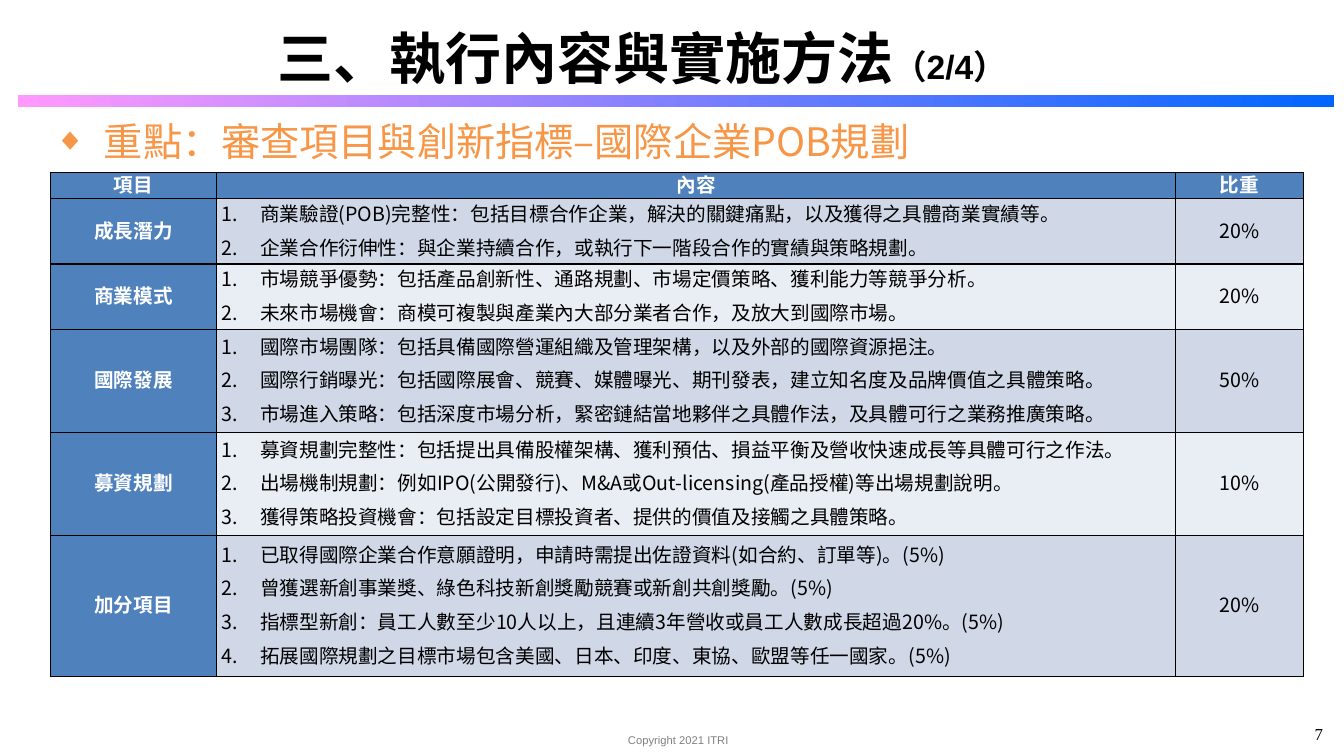
from dataclasses import dataclass
from typing import Any

from lxml import etree
from pptx import Presentation
from pptx import util as u
from pptx.dml.color import RGBColor
from pptx.enum import shapes, text
from pptx.oxml import ns

BLACK = RGBColor(0, 0, 0)
WHITE = RGBColor(255, 255, 255)
GRAY = RGBColor(0x80, 0x80, 0x80)
ORANGE = RGBColor(0xF7, 0x96, 0x46)
PINK = RGBColor(0xFF, 0x99, 0xFF)
BLUE = RGBColor(0x00, 0x66, 0xFF)
HEAD = RGBColor(0x4F, 0x81, 0xBD)
BANDS = (RGBColor(0xD0, 0xD8, 0xE8), RGBColor(0xE9, 0xED, 0xF4))

CJK = "Noto Sans CJK SC"
ALIGN = text.PP_ALIGN
MIDDLE = text.MSO_ANCHOR.MIDDLE
WIDTHS = (1.65, 9.51, 1.27)
HEAD_H = 0.26
TITLES = ("項目", "內容", "比重")


@dataclass(frozen=True)
class Topic:
    name: str
    high: float
    share: str
    points: tuple[str, ...]


@dataclass(frozen=True)
class Look:
    size: float
    color: RGBColor
    bold: bool = False
    face: str = CJK


TOPICS = (
    Topic("成長潛力", 0.65, "20%", (
        "商業驗證(POB)完整性：包括目標合作企業，解決的關鍵痛點，以及獲得之具體商業實績等。",
        "企業合作衍伸性：與企業持續合作，或執行下一階段合作的實績與策略規劃。",
    )),
    Topic("商業模式", 0.65, "20%", (
        "市場競爭優勢：包括產品創新性、通路規劃、市場定價策略、獲利能力等競爭分析。",
        "未來市場機會：商模可複製與產業內大部分業者合作，及放大到國際市場。",
    )),
    Topic("國際發展", 1.02, "50%", (
        "國際市場團隊：包括具備國際營運組織及管理架構，以及外部的國際資源挹注。",
        "國際行銷曝光：包括國際展會、競賽、媒體曝光、期刊發表，建立知名度及品牌價值之具體策略。",
        "市場進入策略：包括深度市場分析，緊密鏈結當地夥伴之具體作法，及具體可行之業務推廣策略。",
    )),
    Topic("募資規劃", 1.02, "10%", (
        "募資規劃完整性：包括提出具備股權架構、獲利預估、損益平衡及營收快速成長等具體可行之作法。",
        "出場機制規劃：例如IPO(公開發行)、M&A或Out-licensing(產品授權)等出場規劃說明。",
        "獲得策略投資機會：包括設定目標投資者、提供的價值及接觸之具體策略。",
    )),
    Topic("加分項目", 1.4, "20%", (
        "已取得國際企業合作意願證明，申請時需提出佐證資料(如合約、訂單等)。(5%)",
        "曾獲選新創事業獎、綠色科技新創獎勵競賽或新創共創獎勵。(5%)",
        "指標型新創：員工人數至少10人以上，且連續3年營收或員工人數成長超過20%。(5%)",
        "拓展國際規劃之目標市場包含美國、日本、印度、東協、歐盟等任一國家。(5%)",
    )),
)
LABEL = Look(14, WHITE, True)
BODY = Look(14, BLACK)


def apply(item: Any, form: dict[str, Any]) -> None:
    for key, value in form.items():
        setattr(item, key, value)


def child(node: Any, tag: str, **attrs: str) -> Any:
    return etree.SubElement(node, ns.qn(tag), attrs)


def write(para: Any, words: str, look: Look) -> None:
    run = para.add_run()
    run.text = words
    apply(run.font, {"size": u.Pt(look.size), "bold": look.bold, "name": look.face})
    run.font.color.rgb = look.color
    child(run.font._element, "a:ea", typeface=CJK)


def hang(para: Any, indent: float) -> Any:
    """Give a hanging indent and return the properties for the bullet."""
    props = para._p.get_or_add_pPr()
    width = u.Inches(indent)
    apply_xml = {"marL": str(width), "indent": str(-width)}
    props.attrib.update(apply_xml)
    return props


def place(slide: Any, spot: tuple[float, ...], words: str, look: Look,
          wrap: bool = True) -> Any:
    frame = slide.shapes.add_textbox(*map(u.Inches, spot)).text_frame
    frame.word_wrap = wrap
    write(frame.paragraphs[0], words, look)
    return frame


def fill_cell(cell: Any, lines: tuple[str, ...], look: Look, color: RGBColor,
              listed: bool = False) -> None:
    side = u.Inches(0.05)
    apply(cell, {"vertical_anchor": MIDDLE, "margin_left": side, "margin_right": side,
                 "margin_top": 0, "margin_bottom": 0})
    for num, line in enumerate(lines):
        frame = cell.text_frame
        para = frame.add_paragraph() if num else frame.paragraphs[0]
        if listed:
            child(hang(para, 0.38), "a:buAutoNum", type="arabicPeriod")
        apply(para, {"alignment": ALIGN.JUSTIFY if listed else ALIGN.CENTER,
                     "line_spacing": u.Pt(18), "space_after": u.Pt(6)})
        write(para, line, look)
    props = cell._tc.get_or_add_tcPr()
    for edge in ("a:lnL", "a:lnR", "a:lnT", "a:lnB"):
        line = child(props, edge, w=str(u.Pt(1)))
        child(child(line, "a:solidFill"), "a:srgbClr", val=str(BLACK))
    cell.fill.solid()
    cell.fill.fore_color.rgb = color


def add_bar(slide: Any) -> None:
    spot = map(u.Inches, (0.18, 0.94, 13.05, 0.12))
    bar = slide.shapes.add_shape(shapes.MSO_SHAPE.RECTANGLE, *spot)
    bar.shadow.inherit = False
    bar.line.fill.background()
    bar.fill.gradient()
    bar.fill.gradient_angle = 0
    for stop, color, pos in zip(bar.fill.gradient_stops, (PINK, BLUE), (0, 1)):
        stop.color.rgb = color
        stop.position = pos


def add_title(slide: Any) -> None:
    title = slide.shapes.title
    apply(title, {"left": u.Inches(1.81), "top": u.Inches(0.15),
                  "width": u.Inches(9.12), "height": u.Inches(0.69)})
    frame = title.text_frame
    apply(frame, {"word_wrap": True, "vertical_anchor": MIDDLE,
                  "auto_size": text.MSO_AUTO_SIZE.NONE})
    para = frame.paragraphs[0]
    apply(para, {"alignment": ALIGN.CENTER, "line_spacing": 1.2})
    for words, size in (("三、執行內容與實施方法", 40), ("（2/4）", 24)):
        write(para, words, Look(size, BLACK, True, "Arial"))


def add_focus(slide: Any) -> None:
    frame = place(slide, (0.52, 1.15, 12.39, 0.55),
                  "重點：審查項目與創新指標–國際企業POB規劃", Look(28, ORANGE))
    apply(frame, {"margin_left": u.Inches(0.02), "margin_right": u.Inches(0.02),
                  "margin_top": u.Inches(0.01), "margin_bottom": u.Inches(0.01)})
    para = frame.paragraphs[0]
    props = hang(para, 0.49)
    child(props, "a:buSzPct", val="80000")
    child(props, "a:buFont", typeface="Arial")
    child(props, "a:buChar", char="◆")
    para.space_after = u.Pt(2)


def add_topics(slide: Any) -> None:
    highs = (HEAD_H, *(topic.high for topic in TOPICS))
    spot = map(u.Inches, (0.5, 1.71, sum(WIDTHS), sum(highs)))
    table = slide.shapes.add_table(len(highs), len(WIDTHS), *spot).table
    apply(table, {"first_row": False, "horz_banding": False})
    for col, width in zip(table.columns, WIDTHS):
        col.width = u.Inches(width)
    for row, high in zip(table.rows, highs):
        row.height = u.Inches(high)
    for num, head in enumerate(TITLES):
        fill_cell(table.cell(0, num), (head,), LABEL, HEAD)
    for num, topic in enumerate(TOPICS):
        name, points, share = table.rows[num + 1].cells
        band = BANDS[num % 2]
        fill_cell(name, (topic.name,), LABEL, HEAD)
        fill_cell(points, topic.points, BODY, band, listed=True)
        fill_cell(share, (topic.share,), BODY, band)


def main() -> None:
    deck = Presentation()
    apply(deck, {"slide_width": u.Inches(13.33), "slide_height": u.Inches(7.5)})
    slide = deck.slides.add_slide(deck.slide_layouts[5])
    add_bar(slide)
    add_title(slide)
    add_focus(slide)
    add_topics(slide)
    place(slide, (6.13, 7.23, 1.21, 0.24), "Copyright 2021 ITRI",
          Look(8, GRAY, face="Arial"), wrap=False)
    page = place(slide, (12.65, 7.13, 0.57, 0.33), "7",
                 Look(12, BLACK, face="Times New Roman"))
    page.paragraphs[0].alignment = ALIGN.RIGHT
    deck.save("out.pptx")


if __name__ == "__main__":
    main()
